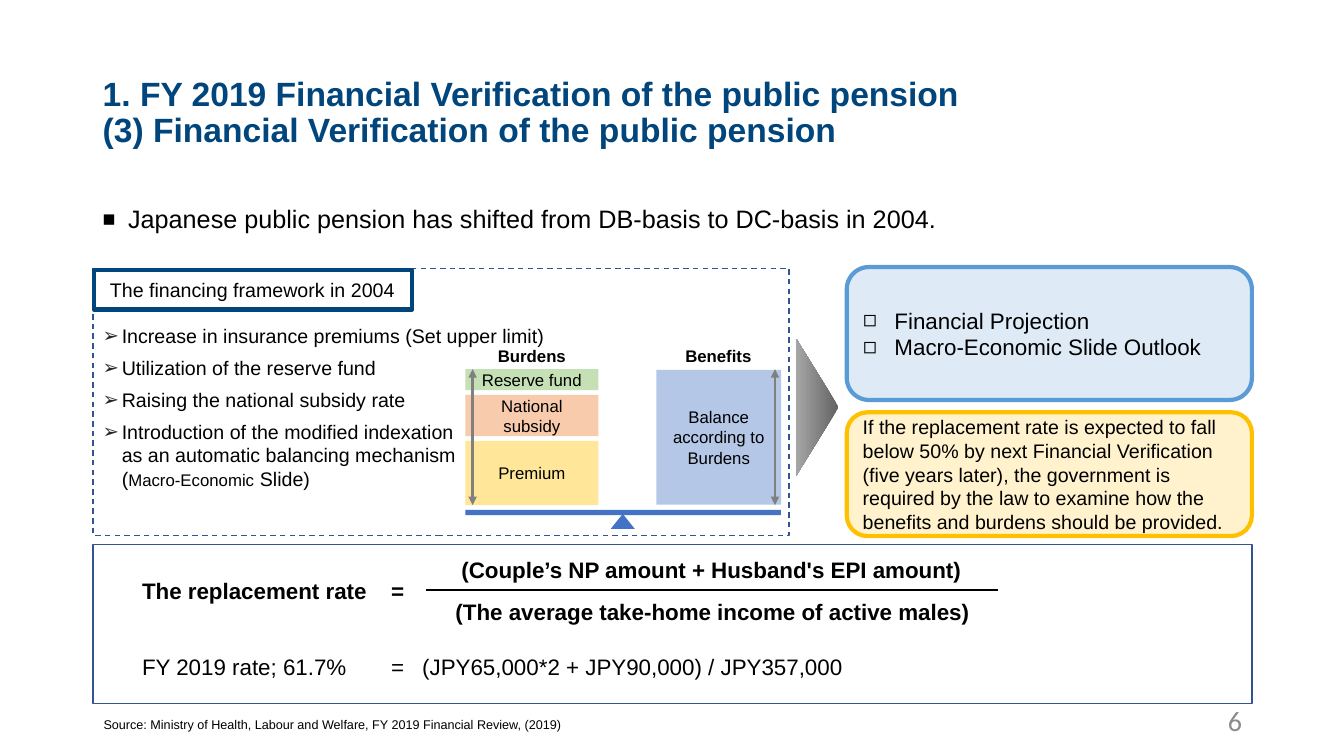
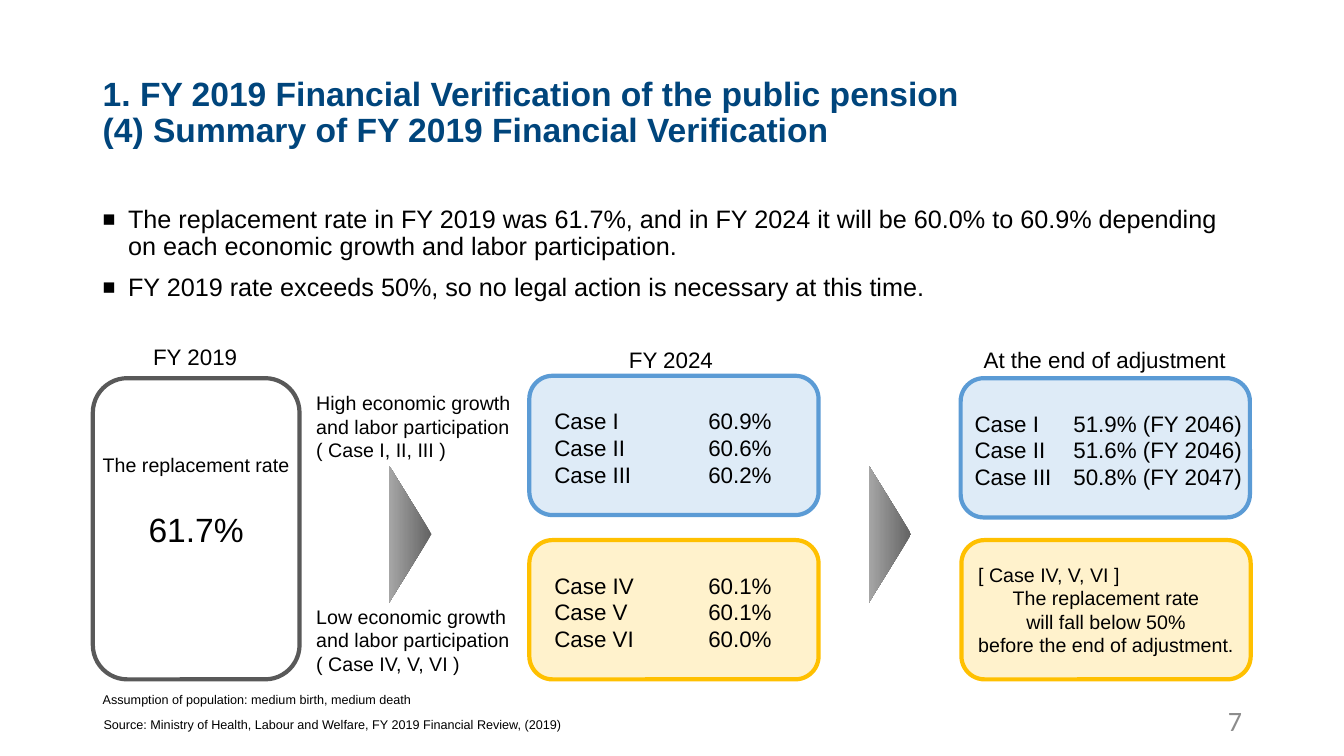
from lxml import etree
from pptx import Presentation
from pptx.dml.color import RGBColor
from pptx.enum.dml import MSO_LINE
from pptx.enum.shapes import MSO_CONNECTOR, MSO_SHAPE
from pptx.enum.text import MSO_ANCHOR, PP_ALIGN
from pptx.oxml.ns import qn
from pptx.util import Cm, Pt

RECT, ROUND, TRIANGLE = MSO_SHAPE.RECTANGLE, MSO_SHAPE.ROUNDED_RECTANGLE, MSO_SHAPE.ISOSCELES_TRIANGLE
STRAIGHT, DASH = MSO_CONNECTOR.STRAIGHT, MSO_LINE.DASH
TOP, MIDDLE = MSO_ANCHOR.TOP, MSO_ANCHOR.MIDDLE
LEFT, CENTER, RIGHT = PP_ALIGN.LEFT, PP_ALIGN.CENTER, PP_ALIGN.RIGHT

BLACK, NAVY, FRAME, ACCENT = "000000", "00457C", "325491", "4472C4"
GREY, DARK_GREY, PAGE_GREY = "808080", "595959", "8C8C8C"
BLUE_CARD = {"fill": "DEEBF7", "line": "5B9BD5", "weight": 3}
YELLOW_CARD = {"fill": "FFF2CC", "line": "FFC000", "weight": 3}
SOURCE = "Source: Ministry of Health, Labour and Welfare, FY 2019 Financial Review, (2019)"
CHAPTER = "1. FY 2019 Financial Verification of the public pension"


def rgb(hex_color):
    return RGBColor.from_string(hex_color)


def sub(parent, tag, **attributes):
    return etree.SubElement(parent, qn(tag), attributes)


class Deck:
    def __init__(self):
        self.prs = Presentation()
        self.prs.slide_width, self.prs.slide_height = Cm(33.87), Cm(19.05)
        self.slide = None

    def new_slide(self, number, heading, points):
        """Start a slide with the shared title, bullets, source and number."""
        self.slide = self.prs.slides.add_slide(self.prs.slide_layouts[6])
        self.text(2.34, 1.02, 29.21, 3.68, f"{CHAPTER}\n{heading}", 24, color=NAVY,
                  bold=True, anchor=MIDDLE, spacing=0.9)
        body = self.text(2.34, 5.08, 29.21, 3.5, points, 18, spacing=0.9, before=10)
        self.bullets(body, "■", 0.64, size=85)
        self.text(23.93, 17.65, 7.62, 1.02, number, 20, color=PAGE_GREY,
                  align=RIGHT, anchor=MIDDLE, font="Calibri")
        self.text(2.36, 17.93, 12.6, 0.64, SOURCE, 9)

    def style_run(self, run, size, color=BLACK, bold=False, font="Arial"):
        run.font.size, run.font.bold, run.font.name = Pt(size), bold, font
        run.font.color.rgb = rgb(color)

    def set_words(self, shape, words, size, align=LEFT, anchor=TOP, spacing=None, before=0, **style):
        frame = shape.text_frame
        frame.word_wrap = True
        frame.vertical_anchor = anchor
        frame.text = words
        for index, paragraph in enumerate(frame.paragraphs):
            paragraph.alignment = align
            if spacing:
                paragraph.line_spacing = spacing
            if before and index:
                paragraph.space_before = Pt(before)
            for run in paragraph.runs:
                self.style_run(run, size, **style)
        return shape

    def text(self, x, y, w, h, words, size, **style):
        box = self.slide.shapes.add_textbox(Cm(x), Cm(y), Cm(w), Cm(h))
        return self.set_words(box, words, size, **style)

    def bullets(self, shape, mark, indent, size=100, color=BLACK):
        for paragraph in shape.text_frame.paragraphs:
            properties = paragraph._p.get_or_add_pPr()
            properties.set("marL", str(Cm(indent)))
            properties.set("indent", str(-Cm(indent)))
            sub(sub(properties, "a:buClr"), "a:srgbClr", val=color)
            sub(properties, "a:buSzPct", val=str(size * 1000))
            sub(properties, "a:buFont", typeface="Arial")
            sub(properties, "a:buChar", char=mark)

    def tabs(self, shape, *stops):
        for paragraph in shape.text_frame.paragraphs:
            tab_list = sub(paragraph._p.get_or_add_pPr(), "a:tabLst")
            for stop in stops:
                sub(tab_list, "a:tab", pos=str(Cm(stop)), algn="l")

    def shape(self, kind, x, y, w, h, fill=None, line=None, weight=1):
        shape = self.slide.shapes.add_shape(kind, Cm(x), Cm(y), Cm(w), Cm(h))
        shape.shadow.inherit = False
        if fill:
            shape.fill.solid()
            shape.fill.fore_color.rgb = rgb(fill)
        else:
            shape.fill.background()
        if line:
            shape.line.color.rgb = rgb(line)
            shape.line.width = Pt(weight)
        else:
            shape.line.fill.background()
        return shape

    def step_arrow(self, center_x, center_y, length=3.45, depth=1.07):
        """Draw a shaded triangle that points right."""
        arrow = self.shape(TRIANGLE, center_x - length / 2, center_y - depth / 2, length, depth)
        arrow.rotation = 90
        arrow.fill.gradient()
        arrow.fill.gradient_angle = 270
        for stop, color in zip(arrow.fill.gradient_stops, ("626262", "A6A6A6")):
            stop.color.rgb = rgb(color)

    def line(self, x1, y1, x2, y2, color, weight, arrows=False):
        line = self.slide.shapes.add_connector(STRAIGHT, Cm(x1), Cm(y1), Cm(x2), Cm(y2))
        line.line.color.rgb = rgb(color)
        line.line.width = Pt(weight)
        properties = line._element.spPr
        if arrows:
            for end in ("a:headEnd", "a:tailEnd"):
                sub(properties.find(qn("a:ln")), end, type="triangle")
        sub(properties, "a:effectLst")


def framework_panel(deck):
    panel = deck.shape(RECT, 2.34, 6.76, 17.55, 6.73, line=FRAME)
    panel.line.dash_style = DASH
    measures = (
        "Increase in insurance premiums (Set upper limit)\n"
        "Utilization of the reserve fund\n"
        "Raising the national subsidy rate\n"
        "Introduction of the modified indexation\vas an automatic balancing mechanism\v("
    )
    deck.set_words(panel, measures, 14, before=6)
    panel.text_frame.margin_top = Cm(1.4)
    deck.bullets(panel, "➢", 0.48, color="262626")
    for words, size in (("Macro-Economic", 12), (" Slide)", 14)):
        run = panel.text_frame.paragraphs[-1].add_run()
        run.text = words
        deck.style_run(run, size)

    tag = deck.shape(RECT, 2.36, 6.81, 8.03, 0.99, line=NAVY, weight=3)
    deck.set_words(tag, "The financing framework in 2004", 14, anchor=MIDDLE)
    tag.text_frame.margin_left, tag.text_frame.margin_right = Cm(0.41), Cm(0.2)


def balance_scale(deck):
    left, bar_width, top, bottom = 11.73, 3.35, 9.3, 12.73
    deck.shape(RECT, left, 12.85, 7.95, 0.13, fill=ACCENT)
    deck.shape(TRIANGLE, 15.39, 12.95, 0.61, 0.38, fill=ACCENT)
    y = top
    for words, height, color in (
        ("Reserve fund", 0.53, "C5E0B4"),
        ("National subsidy", 1.04, "F8CBAD"),
        ("Premium", 1.62, "FFE699"),
    ):
        bar = deck.shape(RECT, left, y, bar_width, height, fill=color)
        deck.set_words(bar, words, 12, align=CENTER, anchor=MIDDLE)
        y += height + 0.12
    benefits = deck.shape(RECT, 16.54, 9.32, 3.15, 3.4, fill="B4C7E7")
    deck.set_words(benefits, "Balance according to Burdens", 12, align=CENTER, anchor=MIDDLE)
    for words, label_x, arrow_x in (("Burdens", left, 11.91), ("Benefits", 16.43, 19.53)):
        deck.text(label_x, 8.71, bar_width, 0.53, words, 12, bold=True,
                  align=CENTER, anchor=MIDDLE)
        deck.line(arrow_x, top, arrow_x, bottom, GREY, 2, arrows=True)


def replacement_formula(deck):
    deck.shape(RECT, 2.34, 13.72, 29.21, 4.01, line=FRAME)
    formula = deck.text(
        3.33, 14.43, 21.3, 2.9,
        "The replacement rate\t=\nFY 2019 rate; 61.7%\t=\t(JPY65,000*2 + JPY90,000) / JPY357,000",
        16, before=35)
    deck.tabs(formula, 6.28, 7.06)
    for run in formula.text_frame.paragraphs[0].runs:
        run.font.bold = True
    deck.text(11.38, 13.89, 13.77, 0.94, "(Couple’s NP amount + Husband's EPI amount)", 16, bold=True)
    deck.line(10.74, 14.86, 25.15, 14.86, BLACK, 1.5)
    deck.text(11.23, 14.94, 13.92, 0.94, "(The average take-home income of active males)", 16, bold=True)


def verification_slide(deck):
    deck.new_slide("6", "(3) Financial Verification of the public pension",
                   "Japanese public pension has shifted from DB-basis to DC-basis in 2004.")
    framework_panel(deck)
    balance_scale(deck)
    deck.step_arrow(20.6, 10.26)
    outlook = deck.shape(ROUND, 21.34, 6.73, 10.21, 3.35, **BLUE_CARD)
    deck.set_words(outlook, "Financial Projection\nMacro-Economic Slide Outlook", 16, anchor=MIDDLE)
    deck.bullets(outlook, "◻", 0.79)
    rule = deck.shape(ROUND, 21.34, 10.39, 10.21, 3.12, **YELLOW_CARD)
    deck.set_words(
        rule,
        "If the replacement rate is expected to fall below 50% by next Financial Verification "
        "(five years later), the government is required by the law to examine how the benefits "
        "and burdens should be provided.",
        14, anchor=MIDDLE)
    replacement_formula(deck)


def summary_slide(deck):
    deck.new_slide(
        "7", "(4) Summary of FY 2019 Financial Verification",
        "The replacement rate in FY 2019 was 61.7%, and in FY 2024 it will be 60.0% to 60.9% "
        "depending on each economic growth and labor participation.\n"
        "FY 2019 rate exceeds 50%, so no legal action is necessary at this time.")
    for x, y, words in ((3.61, 8.53, "FY 2019"), (15.6, 8.59, "FY 2024"),
                        (24.54, 8.59, "At the end of adjustment")):
        deck.text(x, y, 7, 0.94, words, 16)

    current = deck.shape(ROUND, 2.34, 9.53, 5.21, 7.59, line=DARK_GREY, weight=3)
    deck.set_words(current, "61.7%", 24, align=CENTER, anchor=MIDDLE)
    deck.text(2.34, 11.3, 5.5, 0.86, "The replacement rate", 14)

    for y, growth, cases in ((9.73, "High", "I, II, III"), (15.11, "Low", "IV, V, VI")):
        deck.text(7.72, y, 5.6, 2.06,
                  f"{growth} economic growth\nand labor participation\n( Case {cases} )", 14)

    card_width, card_height = 7.29, 3.51
    high_cases, low_cases = "Case I\nCase II\nCase III", "Case IV\nCase V\nCase VI"
    for x, y, card, cases, rates, case_x, rate_x in (
        (13.34, 9.47, BLUE_CARD, high_cases, "60.9%\n60.6%\n60.2%", 13.72, 17.6),
        (13.34, 13.61, YELLOW_CARD, low_cases, "60.1%\n60.1%\n60.0%", 13.72, 17.6),
        (24.21, 9.53, BLUE_CARD, high_cases,
         "51.9% (FY 2046)\n51.6% (FY 2046)\n50.8% (FY 2047)", 24.31, 26.8),
    ):
        deck.shape(ROUND, x, y, card_width, card_height, **card)
        deck.text(case_x, y + 0.67, 2.8, 2.31, cases, 16)
        deck.text(rate_x, y + 0.67, 5.2, 2.31, rates, 16)

    shortfall = deck.shape(ROUND, 24.23, 13.61, card_width, card_height, **YELLOW_CARD)
    deck.set_words(
        shortfall,
        "[ Case IV, V, VI ]\nThe replacement rate\nwill fall below 50%\nbefore the end of adjustment.",
        14, align=CENTER, anchor=MIDDLE)
    shortfall.text_frame.paragraphs[0].alignment = LEFT

    for center_x in (10.34, 22.43):
        deck.step_arrow(center_x, 13.46)
    deck.text(2.34, 17.32, 8.8, 0.64, "Assumption of population: medium birth, medium death", 9)


def main():
    deck = Deck()
    verification_slide(deck)
    summary_slide(deck)
    deck.prs.save("out.pptx")


if __name__ == "__main__":
    main()
